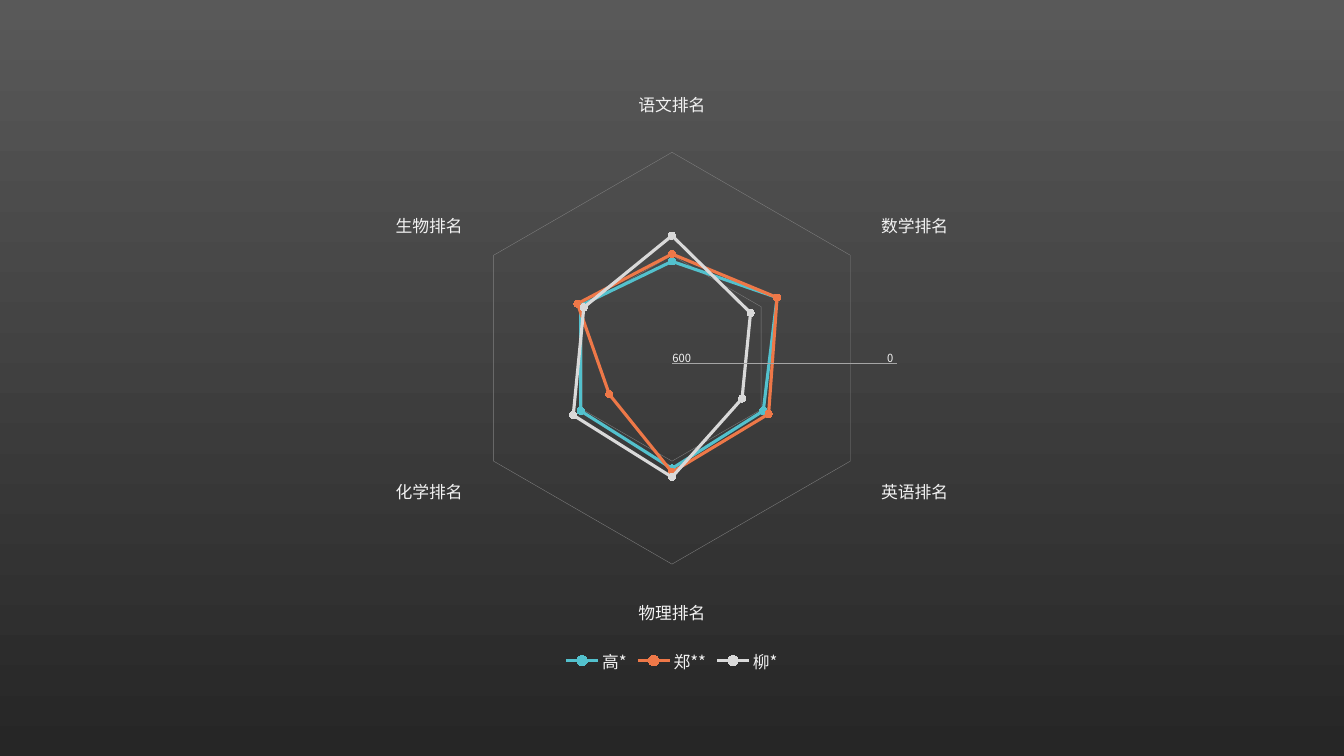
from dataclasses import dataclass

from lxml.etree import SubElement
from pptx import Presentation
from pptx.chart.data import CategoryChartData
from pptx.dml.color import RGBColor
from pptx.enum.chart import XL_CHART_TYPE as ChartType
from pptx.enum.chart import XL_LEGEND_POSITION as LegendPosition
from pptx.enum.chart import XL_MARKER_STYLE as MarkerStyle
from pptx.enum.chart import XL_TICK_LABEL_POSITION as TickLabels
from pptx.enum.chart import XL_TICK_MARK as TickMark
from pptx.enum.shapes import MSO_CONNECTOR as Connector
from pptx.enum.text import MSO_AUTO_SIZE as AutoSize
from pptx.oxml import parse_xml
from pptx.oxml.ns import nsdecls, qn
from pptx.slide import Slide
from pptx.util import Inches, Pt

FONT = "Noto Sans CJK SC"
COLORS = {
    "top": "595959",
    "bottom": "262626",
    "text": "F2F2F2",
    "spoke": "D9D9D9",
    "ring": "808080",
    "scale": "A5A5A5",
    "teal": "53C1CD",
    "orange": "EE7848",
    "silver": "D9D9D9",
}
SUBJECTS = ["语文排名", "数学排名", "英语排名", "物理排名", "化学排名", "生物排名"]
RING_STEP = 84


@dataclass
class Student:
    name: str
    scores: list[int]
    color: str


@dataclass
class ScaleEnd:
    rank: str
    left: float


STUDENTS = [
    Student("高*", [79, 99, 86, 90, 86, 86], "teal"),
    Student("郑**", [85, 99, 91, 93, 59, 89], "orange"),
    Student("柳*", [100, 74, 66, 97, 93, 83], "silver"),
]
SCALE_ENDS = [ScaleEnd("600", 6.57), ScaleEnd("0", 8.7)]


def rgb(name: str) -> RGBColor:
    return RGBColor.from_string(COLORS[name])


def style_font(font, size: float) -> None:
    font.size = Pt(size)
    font.name = FONT
    font.color.rgb = rgb("text")


def style_line(line, color: str, width: float) -> None:
    line.color.rgb = rgb(color)
    line.width = Pt(width)


def set_east_asian_font(root) -> None:
    for latin in list(root.iter(qn("a:latin"))):
        latin.addnext(parse_xml(f'<a:ea {nsdecls("a")} typeface="{FONT}"/>'))


def paint_background(slide: Slide) -> None:
    fill = slide.background.fill
    fill.gradient()
    fill.gradient_angle = 270
    for stop, color, position in zip(fill.gradient_stops, ("top", "bottom"), (0, 1)):
        stop.color.rgb = rgb(color)
        stop.position = position


def add_radar(slide: Slide) -> None:
    ranks = CategoryChartData()
    ranks.categories = SUBJECTS
    for student in STUDENTS:
        ranks.add_series(student.name, student.scores)
    radar = slide.shapes.add_chart(
        ChartType.RADAR_MARKERS,
        Inches(2.22), Inches(0.79), Inches(8.89), Inches(5.93), ranks,
    ).chart
    radar.has_title = False
    style_font(radar.font, 10)

    radar.has_legend = True
    radar.legend.position = LegendPosition.BOTTOM
    radar.legend.include_in_layout = False
    style_font(radar.legend.font, 12)

    subject_axis = radar.category_axis
    subject_axis.major_tick_mark = TickMark.NONE
    subject_axis.has_major_gridlines = True
    style_font(subject_axis.tick_labels.font, 12)
    style_line(subject_axis.format.line, "spoke", 0.75)
    style_line(subject_axis.major_gridlines.format.line, "spoke", 0.75)

    rank_axis = radar.value_axis
    rank_axis.visible = False
    rank_axis.tick_label_position = TickLabels.NONE
    rank_axis.minimum_scale = 0
    rank_axis.maximum_scale = 2 * RING_STEP
    rank_axis.major_unit = RING_STEP
    rank_axis.has_major_gridlines = True
    style_line(rank_axis.major_gridlines.format.line, "ring", 0.25)

    plot = radar.plots[0]
    plot.vary_by_categories = False
    for series, student in zip(plot.series, STUDENTS):
        style_line(series.format.line, student.color, 2.25)
        marker = series.marker
        marker.style = MarkerStyle.CIRCLE
        marker.size = 5
        marker.format.fill.solid()
        marker.format.fill.fore_color.rgb = rgb(student.color)
        style_line(marker.format.line, student.color, 0.75)
    set_east_asian_font(radar.element)


def add_scale(slide: Slide) -> None:
    scale = slide.shapes.add_connector(
        Connector.STRAIGHT, Inches(6.67), Inches(3.6), Inches(8.9), Inches(3.6)
    )
    style_line(scale.line, "scale", 0.5)
    SubElement(scale.element.spPr, qn("a:effectLst"))
    for end in SCALE_ENDS:
        label = slide.shapes.add_textbox(
            Inches(end.left), Inches(3.44), Inches(0.45), Inches(0.24)
        )
        frame = label.text_frame
        frame.text = end.rank
        frame.word_wrap = True
        frame.auto_size = AutoSize.SHAPE_TO_FIT_TEXT
        style_font(frame.paragraphs[0].runs[0].font, 8)
        set_east_asian_font(label.element)


def main() -> None:
    deck = Presentation()
    deck.slide_width = Inches(13.33)
    deck.slide_height = Inches(7.5)
    slide = deck.slides.add_slide(deck.slide_layouts[6])
    paint_background(slide)
    add_radar(slide)
    add_scale(slide)
    deck.save("out.pptx")


if __name__ == "__main__":
    main()
